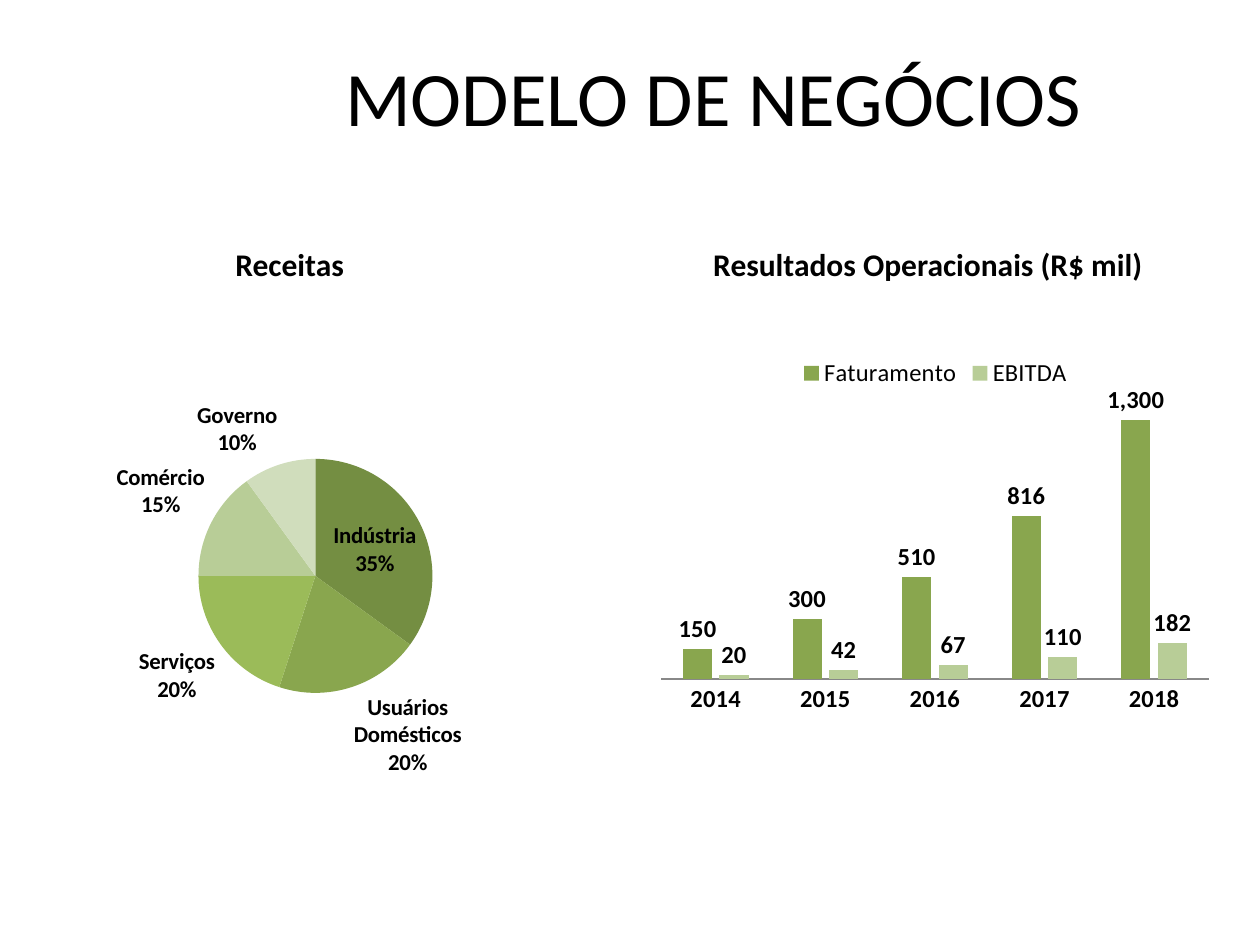
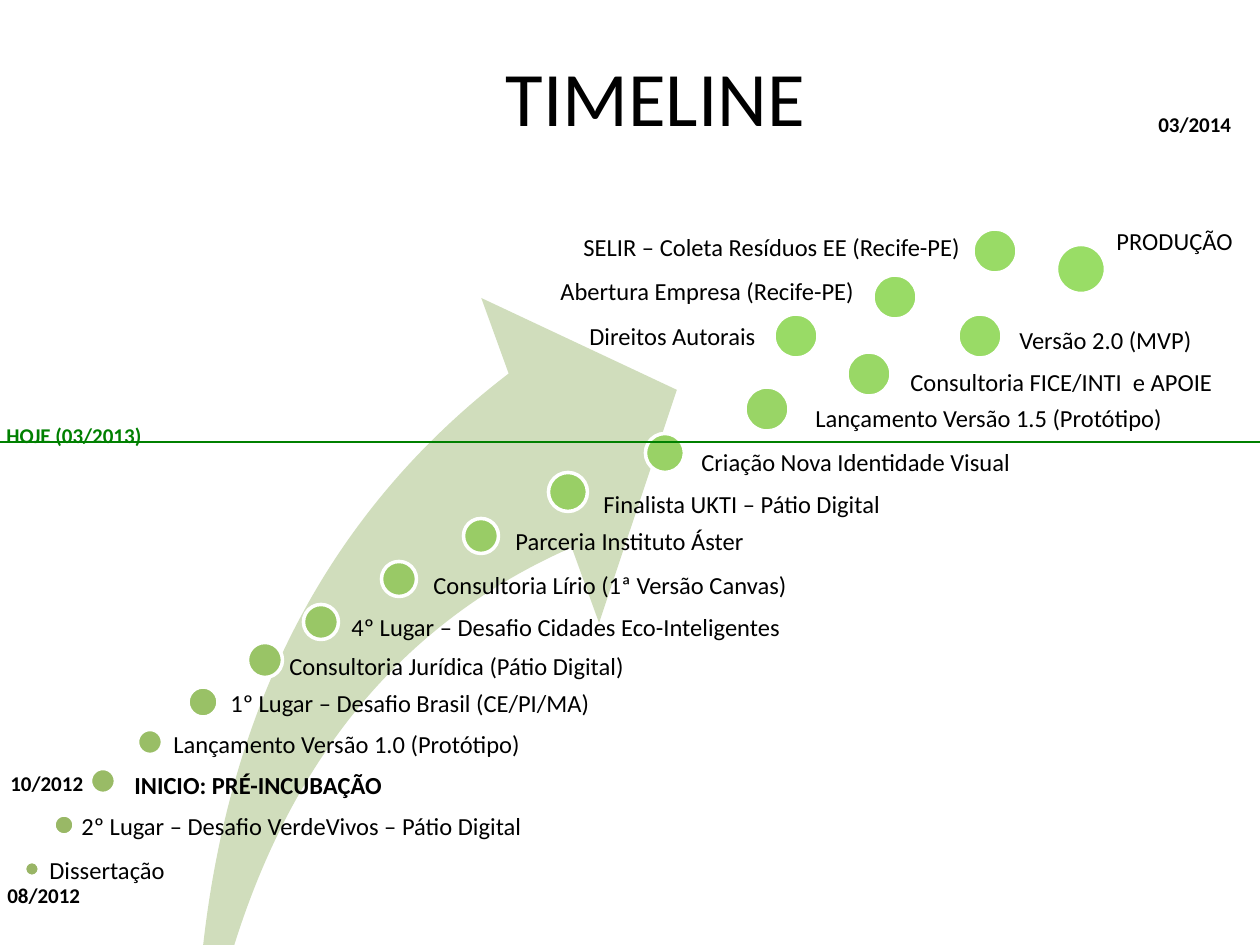
from dataclasses import dataclass
from math import ceil

from lxml.etree import SubElement
from pptx import Presentation
from pptx.chart.data import CategoryChartData
from pptx.dml.color import RGBColor
from pptx.enum.chart import XL_CHART_TYPE, XL_LABEL_POSITION, XL_LEGEND_POSITION, XL_TICK_MARK
from pptx.enum.shapes import MSO_CONNECTOR, MSO_SHAPE
from pptx.enum.text import MSO_ANCHOR, MSO_AUTO_SIZE, PP_ALIGN
from pptx.oxml import parse_xml
from pptx.oxml.ns import nsdecls, qn
from pptx.util import Emu, Pt


@dataclass(frozen=True)
class Theme:
    font: str = "Calibri"
    text: str = "000000"
    white: str = "FFFFFF"
    today: str = "008000"
    arrow: str = "D0DDBC"
    axis: str = "888888"
    pie: tuple = ("748E42", "89A64E", "9BBB59", "B8CD97", "D0DDBC")
    columns: tuple = ("89A64E", "B8CD97")
    title_size: int = 44
    heading_size: int = 18
    label_size: int = 14
    pie_label_size: int = 13
    date_size: int = 12


THEME = Theme()
PX_PER_INCH = 126
SLIDE_SIZE = (1260, 945)
TITLE_TOP, TITLE_WIDTH, TITLE_HEIGHT = 17, 905, 158

# Business model: text, (left, top, width, height), alignment
HEADINGS = [
    ("Receitas", (223, 239, 149, 50), PP_ALIGN.LEFT),
    ("Resultados Operacionais (R$ mil)", (700, 239, 456, 50), PP_ALIGN.CENTER),
]
REVENUE_BOX = (-5, 383, 625, 413)
REVENUE_PLOT = (203, 76, 235, 234)
REVENUE = {
    "Indústria": 35,
    "Usuários Domésticos": 20,
    "Serviços": 20,
    "Comércio": 15,
    "Governo": 10,
}
RESULTS_BOX = (650, 344, 571, 378)
RESULTS_PLOT = (11, 56, 548, 279)
YEARS = ["2014", "2015", "2016", "2017", "2018"]
RESULTS = {
    "Faturamento": [150, 300, 510, 816, 1300],
    "EBITDA": [20, 42, 67, 110, 182],
}

# Timeline: label, (left, top, width) of label, (centre x, centre y, diameter) of dot
MILESTONES = [
    ("Dissertação", (37, 849, 142), (32, 869, 15)),
    ("2º Lugar – Desafio VerdeVivos – Pátio Digital", (69, 805, 483), (64, 825, 20)),
    ("INICIO: PRÉ-INCUBAÇÃO", (122, 764, 276), (103, 781, 25)),
    ("Lançamento Versão 1.0 (Protótipo)", (161, 723, 375), (150, 742, 25)),
    ("1º Lugar – Desafio Brasil (CE/PI/MA)", (218, 682, 388), (203, 702, 30)),
    ("Consultoria Jurídica (Pátio Digital)", (277, 645, 368), (265, 660, 35)),
    ("4º Lugar – Desafio Cidades Eco-Inteligentes", (339, 606, 459), (321, 622, 35)),
    ("Consultoria Lírio (1ª Versão Canvas)", (421, 564, 400), (399, 579, 35)),
    ("Parceria Instituto Áster", (503, 520, 260), (481, 536, 35)),
    ("Finalista UKTI – Pátio Digital", (591, 483, 309), (568, 492, 39)),
    ("Criação Nova Identidade Visual", (689, 441, 338), (665, 453, 39)),
    ("Lançamento Versão 1.5 (Protótipo)", (803, 397, 375), (767, 409, 44)),
    ("Consultoria FICE/INTI  e APOIE", (898, 361, 350), (869, 374, 44)),
    ("Versão 2.0 (MVP)", (1007, 319, 199), (980, 336, 44)),
    ("PRODUÇÃO", (1104, 220, 142), (1081, 269, 49)),
]
PARALLEL_MILESTONES = [
    ("Abertura Empresa (Recife-PE)", (548, 270, 321), (895, 297, 44)),
    ("Direitos Autorais", (577, 315, 193), (796, 336, 44)),
    ("SELIR – Coleta Resíduos EE (Recife-PE)", (571, 226, 410), (995, 251, 44)),
]
PARALLEL_STEP = 13
START_STEP = 2
DATES = [
    ("10/2012", (-2, 764, 100), THEME.text),
    ("08/2012", (-5, 876, 100), THEME.text),
    ("HOJE (03/2013)", (-6, 416, 163), THEME.today),
    ("03/2014", (1146, 105, 100), THEME.text),
]
ARROW_BOX = (101, 323, 639, 735)
TODAY_LINE = (-25, 442, 1295, 442)


def px(*lengths):
    return [Emu(round(length * 914400 / PX_PER_INCH)) for length in lengths]


def apply(target, **values):
    for name, value in values.items():
        setattr(target, name, value)


def set_font(font, size, bold=False, color=THEME.text):
    apply(font, name=THEME.font, size=Pt(size), bold=bold)
    font.color.rgb = RGBColor.from_string(color)


def paint(format_owner, color):
    format_owner.fill.solid()
    format_owner.fill.fore_color.rgb = RGBColor.from_string(color)


def add_titled_slide(presentation, title, left):
    slide = presentation.slides.add_slide(presentation.slide_layouts[5])
    shape = slide.shapes.title
    box = px(left, TITLE_TOP, TITLE_WIDTH, TITLE_HEIGHT)
    apply(shape, **dict(zip(("left", "top", "width", "height"), box)))
    apply(shape.text_frame, text=title, vertical_anchor=MSO_ANCHOR.MIDDLE)
    paragraph = shape.text_frame.paragraphs[0]
    paragraph.alignment = PP_ALIGN.CENTER
    set_font(paragraph.font, THEME.title_size)
    return slide


def add_text(slide, text, box, size, bold=False, color=THEME.text, **frame_format):
    shape = slide.shapes.add_textbox(*px(*box))
    frame = shape.text_frame
    apply(frame, text=text, auto_size=MSO_AUTO_SIZE.SHAPE_TO_FIT_TEXT, **frame_format)
    set_font(frame.paragraphs[0].font, size, bold, color)
    return frame.paragraphs[0]


def add_chart(slide, kind, box, plot_box, categories, series):
    """Add a chart whose inner plot area fills plot_box, in px within the chart."""
    data = CategoryChartData()
    data.categories = categories
    for name, values in series.items():
        data.add_series(name, values)
    chart = slide.shapes.add_chart(kind, *px(*box), data).chart
    chart.has_title = False
    set_font(chart.font, 10)

    plot_area = chart.plots[0]._element.getparent()
    for layout in plot_area.findall(qn("c:layout")):
        plot_area.remove(layout)
    layout = parse_xml(f"<c:layout {nsdecls('c')}><c:manualLayout/></c:layout>")
    settings = {"layoutTarget": "inner", "xMode": "edge", "yMode": "edge"}
    for name, length, whole in zip("xywh", plot_box, box[2:] * 2):
        settings[name] = f"{length / whole:.4f}"
    for name, value in settings.items():
        SubElement(layout[0], qn(f"c:{name}")).set("val", value)
    plot_area.insert(0, layout)
    return chart


def add_revenue_pie(slide):
    chart = add_chart(slide, XL_CHART_TYPE.PIE, REVENUE_BOX, REVENUE_PLOT,
                      list(REVENUE), {"Series 1": list(REVENUE.values())})
    chart.has_legend = False
    plot = chart.plots[0]
    for index, color in enumerate(THEME.pie):
        paint(plot.series[0].points[index].format, color)
    plot.has_data_labels = True
    labels = plot.data_labels
    apply(labels, show_percentage=True, show_category_name=True, show_value=False,
          number_format="0%", number_format_is_linked=False,
          position=XL_LABEL_POSITION.BEST_FIT)
    set_font(labels.font, THEME.pie_label_size, bold=True)
    separator = parse_xml(f"<c:separator {nsdecls('c')}>\n</c:separator>")
    labels._element.find(qn("c:showBubbleSize")).addnext(separator)


def add_results_columns(slide):
    chart = add_chart(slide, XL_CHART_TYPE.COLUMN_CLUSTERED, RESULTS_BOX, RESULTS_PLOT,
                      YEARS, RESULTS)
    chart.has_legend = True
    apply(chart.legend, position=XL_LEGEND_POSITION.TOP, include_in_layout=False)
    set_font(chart.legend.font, THEME.label_size)
    apply(chart.value_axis, visible=False, has_major_gridlines=False,
          minimum_scale=0, maximum_scale=1400)
    axis = chart.category_axis
    axis.major_tick_mark = XL_TICK_MARK.NONE
    axis.format.line.color.rgb = RGBColor.from_string(THEME.axis)
    set_font(axis.tick_labels.font, THEME.label_size, bold=True)
    plot = chart.plots[0]
    apply(plot, gap_width=150, overlap=-25, vary_by_categories=False, has_data_labels=True)
    apply(plot.data_labels, show_value=True, number_format="#,##0",
          number_format_is_linked=False, position=XL_LABEL_POSITION.OUTSIDE_END)
    set_font(plot.data_labels.font, THEME.label_size, bold=True)
    for series, color in zip(plot.series, THEME.columns):
        paint(series.format, color)


def add_milestone(slide, step, label, label_at, dot):
    center_x, center_y, size = dot
    shape = slide.shapes.add_shape(
        MSO_SHAPE.OVAL, *px(center_x - size / 2, center_y - size / 2, size, size))
    shape.shadow.inherit = False
    green = ceil(181 + 40 * step / (len(MILESTONES) - 1))
    paint(shape, f"99{green:02X}66")
    shape.line.color.rgb = RGBColor.from_string(THEME.white)
    shape.line.width = Pt(2)
    add_text(slide, label, (*label_at, 43), THEME.label_size,
             bold=label == MILESTONES[START_STEP][0], word_wrap=False)


def add_arrow(slide):
    arrow = slide.shapes.add_shape(MSO_SHAPE.SWOOSH_ARROW, *px(*ARROW_BOX))
    arrow.shadow.inherit = False
    arrow.rotation = 346.5
    for index in range(2):
        arrow.adjustments[index] = 0.25
    paint(arrow, THEME.arrow)
    arrow.line.fill.background()


def add_today_line(slide):
    line = slide.shapes.add_connector(MSO_CONNECTOR.STRAIGHT, *px(*TODAY_LINE))
    line.line.color.rgb = RGBColor.from_string(THEME.today)
    line.line.width = Pt(1.5)
    SubElement(line._element.spPr, qn("a:effectLst"))


def build_business_model(presentation):
    slide = add_titled_slide(presentation, "MODELO DE NEGÓCIOS", 261)
    for text, box, alignment in HEADINGS:
        paragraph = add_text(slide, text, box, THEME.heading_size, bold=True,
                             word_wrap=True, vertical_anchor=MSO_ANCHOR.MIDDLE)
        paragraph.alignment = alignment
    add_revenue_pie(slide)
    add_results_columns(slide)


def build_timeline(presentation):
    slide = add_titled_slide(presentation, "TIMELINE", 203)
    add_arrow(slide)
    for step, milestone in enumerate(MILESTONES):
        add_milestone(slide, step, *milestone)
    for milestone in PARALLEL_MILESTONES:
        add_milestone(slide, PARALLEL_STEP, *milestone)
    for text, place, color in DATES:
        add_text(slide, text, (*place, 38), THEME.date_size, bold=True, color=color,
                 word_wrap=False)
    add_today_line(slide)


def main():
    presentation = Presentation()
    presentation.slide_width, presentation.slide_height = px(*SLIDE_SIZE)
    build_business_model(presentation)
    build_timeline(presentation)
    presentation.save("out.pptx")


if __name__ == "__main__":
    main()
